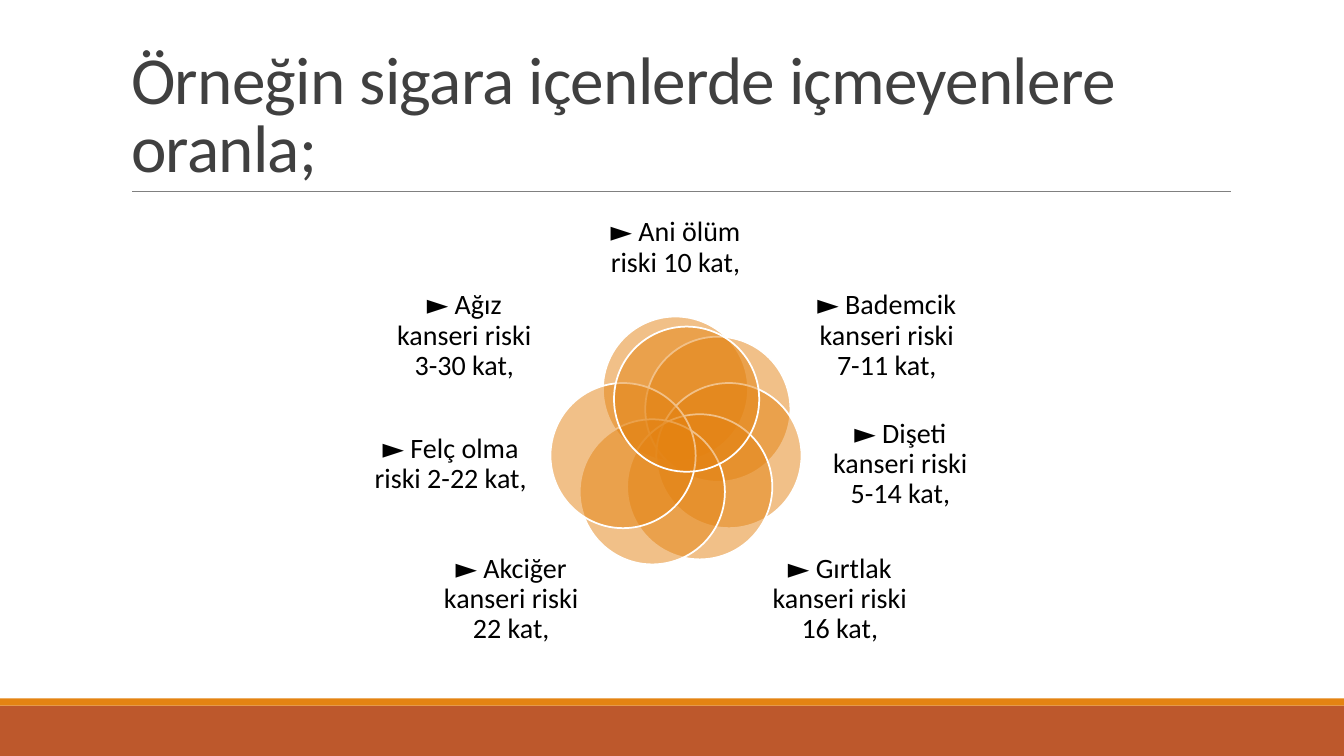
from dataclasses import dataclass

from lxml import etree
from pptx import Presentation
from pptx.dml.color import RGBColor
from pptx.enum import shapes, text
from pptx.oxml.ns import qn
from pptx.util import Inches, Pt


@dataclass(frozen=True)
class Theme:
    font: str = "Calibri"
    title_size: float = 48
    label_size: float = 20
    title_color: str = "404040"
    label_color: str = "000000"
    orange: str = "E48312"
    rust: str = "BD582C"
    rule: str = "808080"
    outline: str = "FFFFFF"


THEME = Theme()
TITLE = "Örneğin sigara içenlerde içmeyenlere oranla;"
CIRCLE_SIZE = 1.44

# Each risk: circle left and top, label frame (left, top, width, height), label
RISKS = [
    ((5.98, 3.14), (5.88, 2.02, 1.64, 0.88), "► Ani ölüm riski 10 kat,"),
    ((6.4, 3.34), (8.02, 2.85, 1.55, 0.97), "► Bademcik kanseri riski 7-11 kat,"),
    ((6.51, 3.8), (8.17, 4.09, 1.52, 1.03), "► Dişeti kanseri riski 5-14 kat,"),
    ((6.22, 4.11), (7.51, 5.47, 1.64, 0.95), "► Gırtlak kanseri riski 16 kat,"),
    ((5.75, 4.16), (4.25, 5.47, 1.64, 0.95), "► Akciğer kanseri riski 22 kat,"),
    ((5.46, 3.8), (3.71, 4.09, 1.52, 1.03), "► Felç olma riski 2-22 kat,"),
    ((6.09, 3.24), (3.83, 2.85, 1.55, 0.97), "► Ağız kanseri riski 3-30 kat,"),
]


def color(code):
    return RGBColor.from_string(code)


def inches(*lengths):
    return [Inches(length) for length in lengths]


def style_paragraph(para, size, code, align, line_spacing):
    para.alignment = align
    para.line_spacing = line_spacing
    para.font.name = THEME.font
    para.font.size = Pt(size)
    para.font.color.rgb = color(code)


def add_filled(parent, preset, frame, code):
    shape = parent.add_shape(preset, *inches(*frame))
    shape.shadow.inherit = False
    shape.fill.solid()
    shape.fill.fore_color.rgb = color(code)
    shape.line.fill.background()
    return shape


def add_rule(slide, left, right, top):
    rule = slide.shapes.add_connector(
        shapes.MSO_CONNECTOR.STRAIGHT, *inches(left, top, right, top))
    rule.line.color.rgb = color(THEME.rule)
    rule.line.width = Pt(0.5)
    etree.SubElement(rule._element.spPr, qn("a:effectLst"))


def set_title(slide):
    title = slide.shapes.title
    title.left, title.top, title.width, title.height = inches(1.2, 0.31, 11, 1.59)
    frame = title.text_frame
    frame.text = TITLE
    frame.word_wrap = True
    frame.auto_size = text.MSO_AUTO_SIZE.NONE
    frame.vertical_anchor = text.MSO_ANCHOR.BOTTOM
    para = frame.paragraphs[0]
    style_paragraph(para, THEME.title_size, THEME.title_color,
                    text.PP_ALIGN.LEFT, 0.85)
    para.runs[0]._r.get_or_add_rPr().set("spc", "-50")


def add_circle(parent, left, top):
    """Add a half-transparent circle of the Venn diagram."""
    circle = add_filled(parent, shapes.MSO_SHAPE.OVAL,
                        (left, top, CIRCLE_SIZE, CIRCLE_SIZE), THEME.orange)
    fill_color = circle._element.spPr.find(f"{qn('a:solidFill')}/{qn('a:srgbClr')}")
    etree.SubElement(fill_color, qn("a:alpha"), val="50000")
    circle.line.color.rgb = color(THEME.outline)
    circle.line.width = Pt(1.25)


def add_label(parent, frame, wording):
    box = parent.add_textbox(*inches(*frame))
    body = box.text_frame
    body.text = wording
    body.word_wrap = True
    body.vertical_anchor = text.MSO_ANCHOR.MIDDLE
    body.margin_left = body.margin_right = body.margin_top = body.margin_bottom = 0
    style_paragraph(body.paragraphs[0], THEME.label_size, THEME.label_color,
                    text.PP_ALIGN.CENTER, 0.9)


def main():
    deck = Presentation()
    deck.slide_width, deck.slide_height = inches(13.33, 7.5)
    slide = deck.slides.add_slide(deck.slide_layouts.get_by_name("Title Only"))

    set_title(slide)
    rectangle = shapes.MSO_SHAPE.RECTANGLE
    add_filled(slide.shapes, rectangle, (0, 7, 13.33, 0.5), THEME.rust)
    add_filled(slide.shapes, rectangle, (0, 6.93, 13.33, 0.07), THEME.orange)
    add_rule(slide, 1.31, 12.21, 1.9)

    diagram = slide.shapes.add_group_shape().shapes
    for corner, frame, wording in RISKS:
        add_circle(diagram, *corner)
        add_label(diagram, frame, wording)

    deck.save("out.pptx")


if __name__ == "__main__":
    main()
